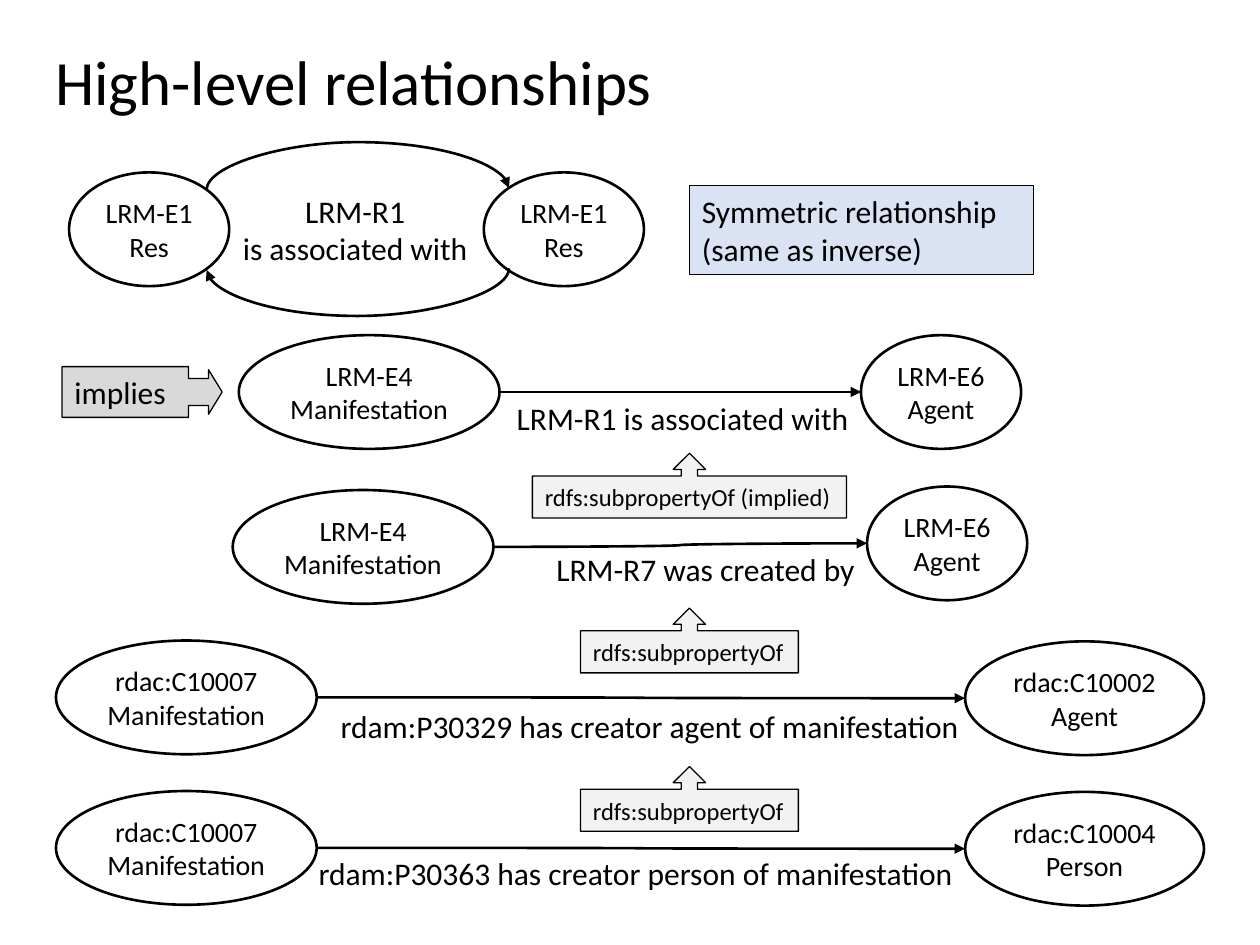
from lxml.etree import SubElement
from pptx import Presentation
from pptx.dml.color import RGBColor
from pptx.enum.shapes import MSO_CONNECTOR, MSO_SHAPE as Shape
from pptx.enum.text import MSO_ANCHOR, PP_ALIGN as Align
from pptx.oxml.ns import qn
from pptx.util import Pt

BLACK = RGBColor(0x00, 0x00, 0x00)
WHITE = RGBColor(0xFF, 0xFF, 0xFF)
BLUE = RGBColor(0xDA, 0xE3, 0xF3)
LIGHT_GREY = RGBColor(0xF2, 0xF2, 0xF2)
GREY = RGBColor(0xD9, 0xD9, 0xD9)
NODE_HEIGHT = 65

presentation = Presentation()
presentation.slide_width = Pt(720)
presentation.slide_height = Pt(540)
slide = presentation.slides.add_slide(presentation.slide_layouts[6])


def add_text(kind, box, text, size, align=Align.LEFT, fill=None, line=0.75, wrap=False):
    left, top, width, height = map(Pt, box)
    if kind is None:
        shape = slide.shapes.add_textbox(left, top, width, height)
    else:
        shape = slide.shapes.add_shape(kind, left, top, width, height)
        shape.shadow.inherit = False
        shape.line.color.rgb = BLACK
        shape.line.width = Pt(line)
        if fill is None:
            shape.fill.background()
        else:
            shape.fill.solid()
            shape.fill.fore_color.rgb = fill
    frame = shape.text_frame
    frame.word_wrap = wrap
    frame.vertical_anchor = MSO_ANCHOR.TOP if kind is None else MSO_ANCHOR.MIDDLE
    frame.text = text
    for paragraph in frame.paragraphs:
        paragraph.alignment = align
        paragraph.font.name = "Calibri"
        paragraph.font.size = Pt(size)
        paragraph.font.color.rgb = BLACK
    return shape


def add_arrow(x1, y1, x2, y2):
    arrow = slide.shapes.add_connector(MSO_CONNECTOR.CURVE, Pt(x1), Pt(y1), Pt(x2), Pt(y2))
    arrow.line.color.rgb = BLACK
    arrow.line.width = Pt(1.5)
    SubElement(arrow.line._get_or_add_ln(), qn("a:tailEnd"), type="triangle")
    SubElement(arrow._element.spPr, qn("a:effectLst"))
    return arrow


add_text(None, (24.5, 21, 358.5, 51), "High-level relationships", 36)

for left in (39.5, 276.5):
    add_text(Shape.OVAL, (left, 98.5, 91.5, NODE_HEIGHT), "LRM-E1\nRes", 16, Align.CENTER, line=1.5)
add_text(None, (131, 106, 144, 51), "LRM-R1\nis associated with", 18, Align.CENTER)

for start, end in (((205, 194.4), (204, 21.6)), ((204, 67.4), (205, 240.2))):
    loop = add_arrow(*start, *end)
    properties = loop._element.spPr
    properties.find(qn("a:xfrm")).set("rot", "5400000")
    adjustments = properties.find(qn("a:prstGeom")).find(qn("a:avLst"))
    SubElement(adjustments, qn("a:gd"), name="adj1", fmla="val 2748200")

add_text(Shape.RECTANGLE, (394, 106, 196.5, 51), "Symmetric relationship\n(same as inverse)", 18,
         fill=BLUE, wrap=True)

relationships = [
    ("LRM-E4\nManifestation", 136.5, 191.5, "LRM-R1 is associated with", (276, 224.5, 216),
     "LRM-E6\nAgent", 492, 191.5, 91.5),
    ("LRM-E4\nManifestation", 133, 280, "LRM-R7 was created by", (308, 310.5, 187.5),
     "LRM-E6\nAgent", 495.5, 278, 91.5),
    ("rdac:C10007\nManifestation", 32, 366, "rdam:P30329 has creator agent of manifestation",
     (183.5, 400.5, 371.5), "rdac:C10002\nAgent", 551.5, 366.5, 136.5),
    ("rdac:C10007\nManifestation", 32, 452, "rdam:P30363 has creator person of manifestation",
     (170.5, 484.5, 381), "rdac:C10004\nPerson", 551.5, 452.5, 136.5),
]
for source, left, top, label, (label_left, label_top, label_width), target, right, target_top, width in relationships:
    add_text(Shape.OVAL, (left, top, 149, NODE_HEIGHT), source, 16, Align.CENTER, line=1.5)
    add_arrow(left + 149, top + NODE_HEIGHT / 2, right, target_top + NODE_HEIGHT / 2)
    add_text(None, (label_left, label_top, label_width, 29), label, 18, Align.RIGHT,
             wrap=label_width == 216)
    add_text(Shape.OVAL, (right, target_top, width, NODE_HEIGHT), target, 16, Align.CENTER, line=1.5)

for top, width, label in (
    (259, 179.5, "rdfs:subpropertyOf (implied)"),
    (347.5, 124.5, "rdfs:subpropertyOf"),
    (438, 124.5, "rdfs:subpropertyOf"),
):
    add_text(Shape.UP_ARROW_CALLOUT, (394 - width / 2, top, width, 37), label, 14, fill=LIGHT_GREY)

implies = add_text(Shape.RIGHT_ARROW_CALLOUT, (35.5, 209.5, 91.5, 29), "implies", 18,
                   fill=GREY, wrap=True)
for index, value in enumerate((0.53, 0.44, 0.27, 0.79)):
    implies.adjustments[index] = value

presentation.save("out.pptx")
